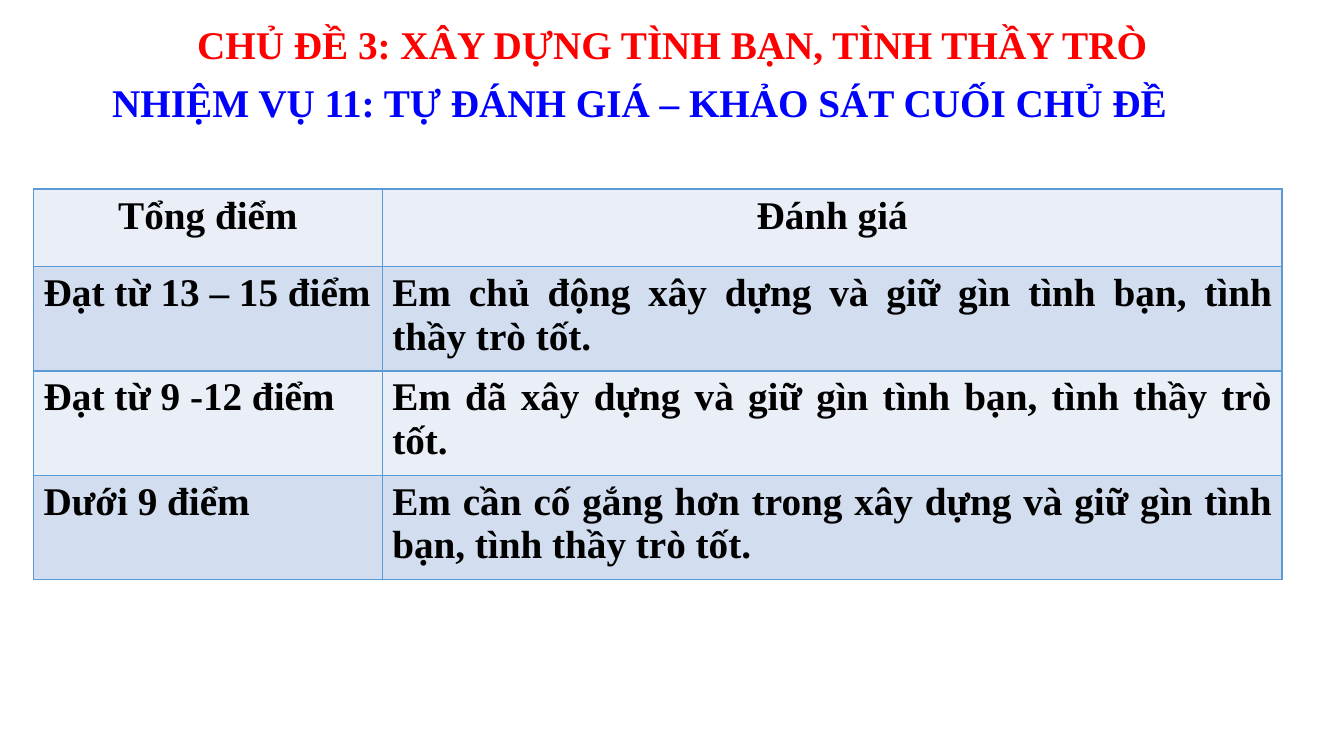
from pptx import Presentation
from pptx.dml.color import RGBColor
from pptx.enum.text import PP_ALIGN
from pptx.oxml import parse_xml
from pptx.oxml.ns import nsdecls
from pptx.util import Pt

EMU_PER_PX = 9525
FONT_NAME = "Times New Roman"
FONT_SIZE = 28
BORDER_COLOR = "5B9BD5"
ROW_COLORS = ("EAEFF7", "D2DEEF")

RATINGS = [
    ("Tổng điểm", "Đánh giá"),
    ("Đạt từ 13 – 15 điểm", "Em chủ động xây dựng và giữ gìn tình bạn, tình thầy trò tốt."),
    ("Đạt từ 9 -12 điểm", "Em đã xây dựng và giữ gìn tình bạn, tình thầy trò tốt."),
    ("Dưới 9 điểm", "Em cần cố gắng hơn trong xây dựng và giữ gìn tình bạn, tình thầy trò tốt."),
]


def px(length):
    return length * EMU_PER_PX


def color(value):
    return RGBColor.from_string(value)


class SlideBuilder:
    """Holds the text style and the current slide."""

    def __init__(self, page):
        self.page = page
        self.font_name = FONT_NAME
        self.font_size = Pt(FONT_SIZE)

    def set_text(self, text_frame, text, text_color, alignment):
        text_frame.text = text
        paragraph = text_frame.paragraphs[0]
        paragraph.alignment = alignment
        font = paragraph.runs[0].font
        font.name = self.font_name
        font.size = self.font_size
        font.bold = True
        font.color.rgb = color(text_color)

    def heading(self, left, top, width, height, text, text_color):
        box = self.page.shapes.add_textbox(px(left), px(top), px(width), px(height))
        box.text_frame.word_wrap = True
        self.set_text(box.text_frame, text, text_color, PP_ALIGN.CENTER)

    def border(self, cell):
        """Draw a one-point line on all four sides of the cell."""
        properties = cell._tc.get_or_add_tcPr()
        for position, side in enumerate(("lnL", "lnR", "lnT", "lnB")):
            line = parse_xml(
                f'<a:{side} {nsdecls("a")} w="{Pt(1)}"><a:solidFill>'
                f'<a:srgbClr val="{BORDER_COLOR}"/></a:solidFill></a:{side}>'
            )
            properties.insert(position, line)

    def table(self, left, top, column_widths, row_heights, rows):
        frame = self.page.shapes.add_table(
            len(rows), len(column_widths), px(left), px(top),
            px(sum(column_widths)), px(sum(row_heights)),
        )
        table = frame.table
        for column, width in zip(table.columns, column_widths):
            column.width = px(width)
        for row_index, (texts, height) in enumerate(zip(rows, row_heights)):
            table.rows[row_index].height = px(height)
            alignment = PP_ALIGN.JUSTIFY if row_index else PP_ALIGN.CENTER
            for column_index, text in enumerate(texts):
                cell = table.cell(row_index, column_index)
                cell.fill.solid()
                cell.fill.fore_color.rgb = color(ROW_COLORS[row_index % 2])
                self.border(cell)
                self.set_text(cell.text_frame, text, "000000", alignment)


def main():
    deck = Presentation()
    deck.slide_width, deck.slide_height = px(1280), px(720)
    builder = SlideBuilder(deck.slides.add_slide(deck.slide_layouts[6]))
    builder.heading(8, 15, 1264, 55, "CHỦ ĐỀ 3: XÂY DỰNG TÌNH BẠN, TÌNH THẦY TRÒ", "FF0000")
    builder.heading(8, 70, 1202, 55, "NHIỆM VỤ 11: TỰ ĐÁNH GIÁ – KHẢO SÁT CUỐI CHỦ ĐỀ", "0000FF")
    builder.table(32, 180, (332, 857), (74, 99, 99, 99), RATINGS)
    deck.save("out.pptx")


if __name__ == "__main__":
    main()
